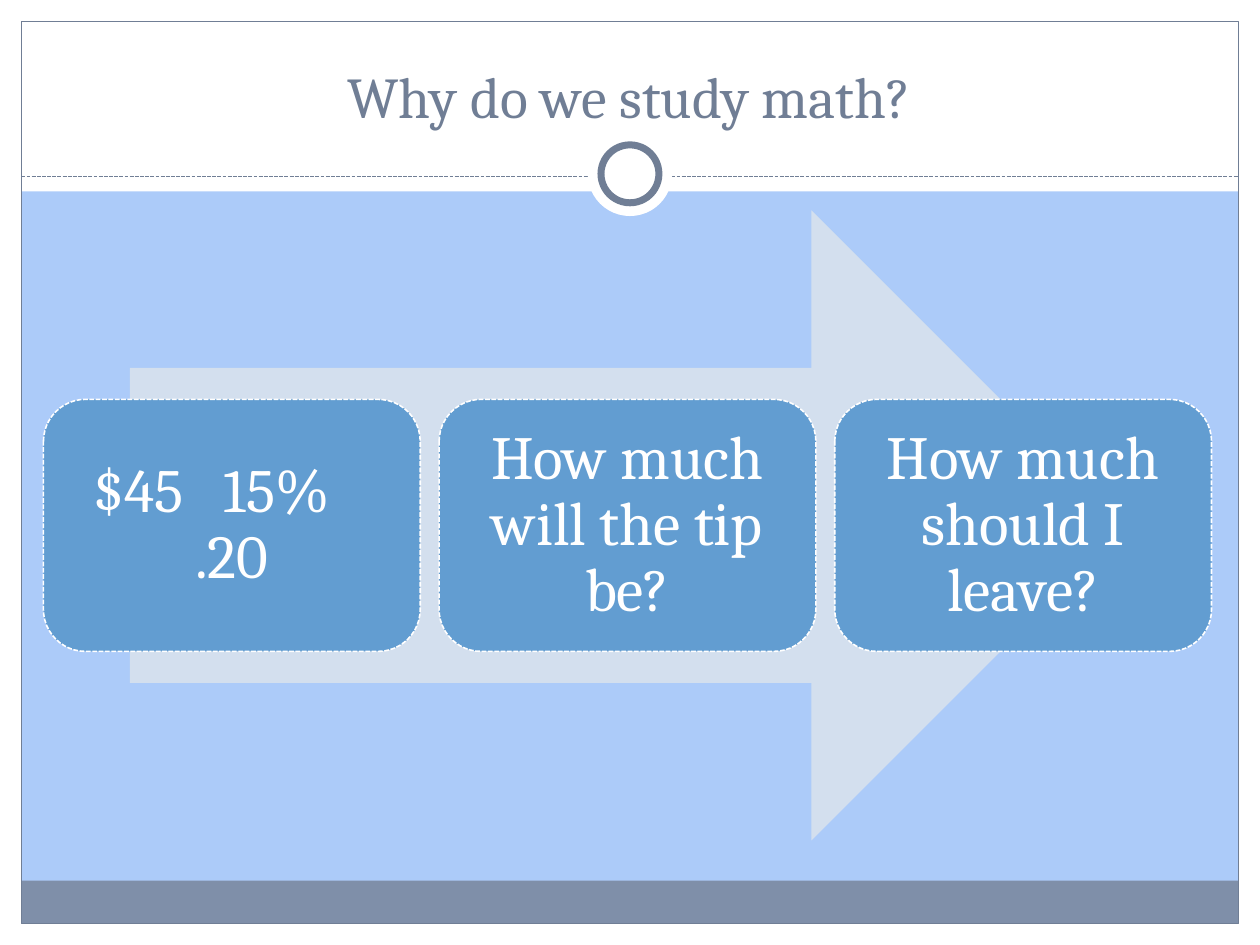
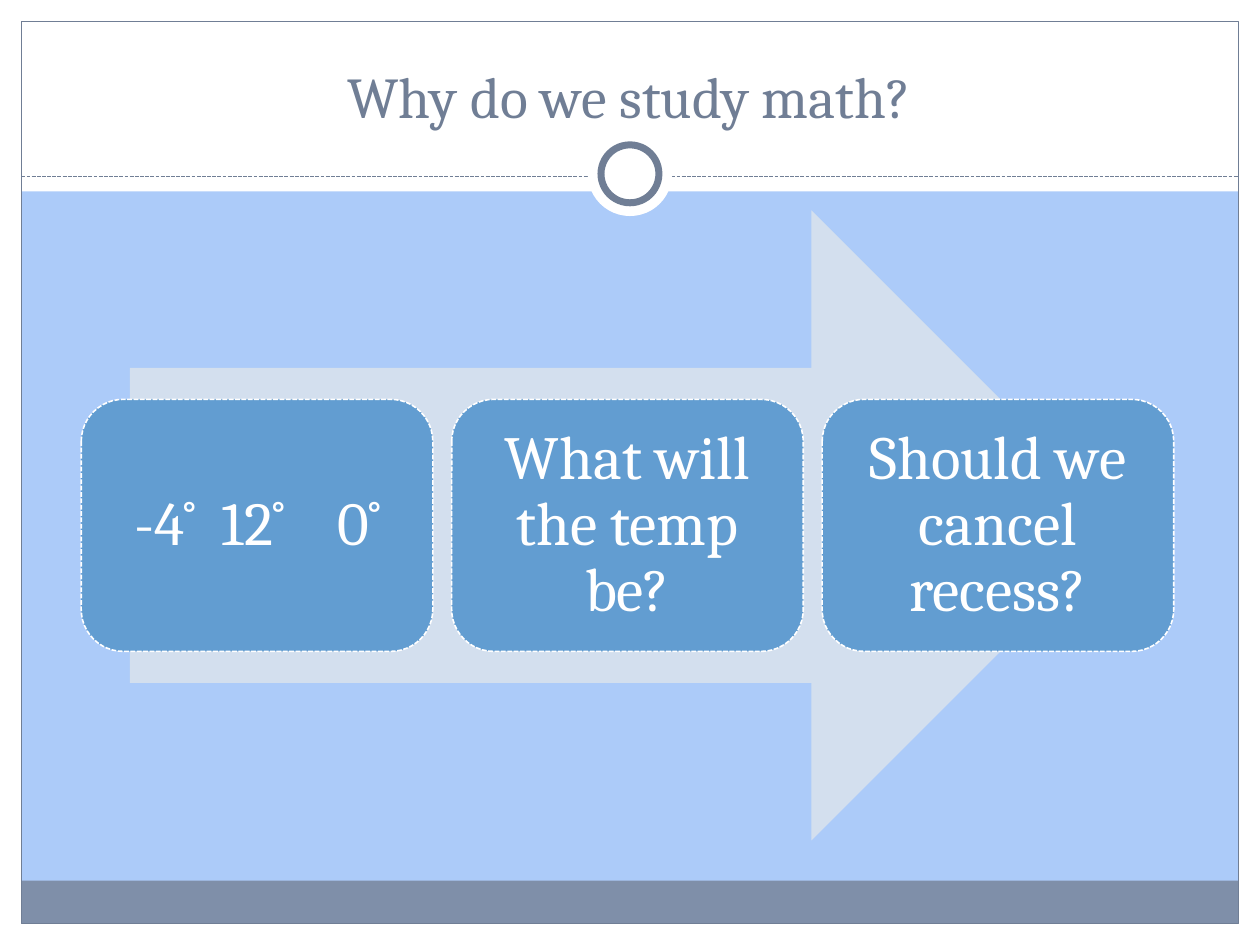
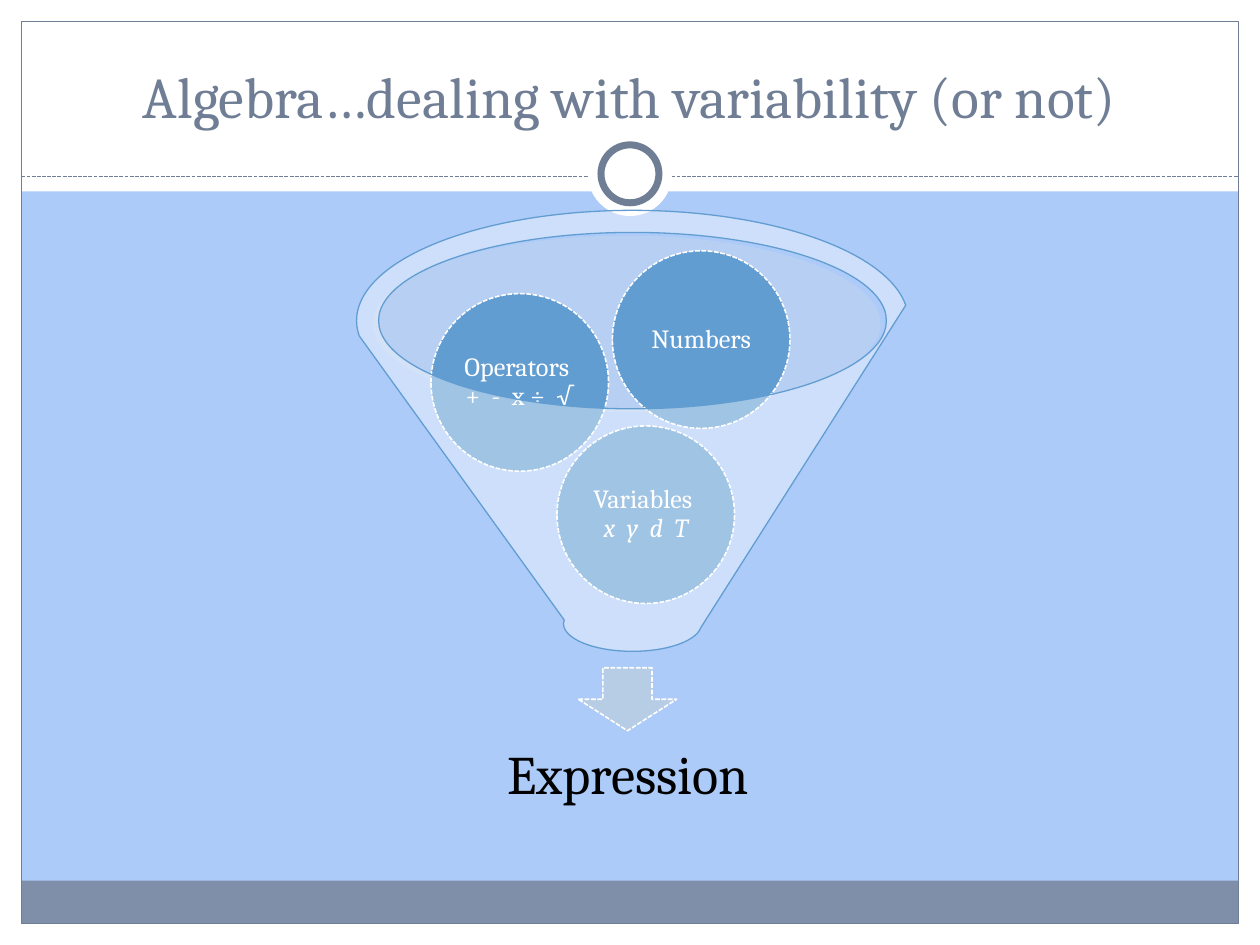
from pptx import Presentation
from pptx.dml.color import RGBColor
from pptx.enum.dml import MSO_LINE_DASH_STYLE as Dash
from pptx.enum.shapes import MSO_CONNECTOR as Link, MSO_SHAPE as Kind
from pptx.enum.text import MSO_ANCHOR as Anchor, PP_ALIGN as Align
from pptx.oxml.ns import qn
from pptx.util import Inches, Pt
from lxml.etree import SubElement

FONT = "Cambria"
WHITE, SLATE, BLUE, SKY = "FFFFFF", "707E95", "629DD1", "ACCBF9"
WIDE, HIGH, EDGE = 10, 7.5, 0.17
RULE = 1.4
MID, GAP = 4.98, 0.15

FLOWS = [
    ("Why do we study math?", 2.99,
     ["$45   15%    .20", "How much will the tip be?", "How much should I leave?"]),
    ("Why do we study math?", 2.79,
     ["-4˚  12˚    0˚", "What will the temp be?", "Should we cancel recess?"]),
]
TOPIC = "Algebra…dealing with variability (or not)"
BALLS = [
    (4.42, 3.38, "Variables  ", "x  y  d  T"),
    (3.42, 2.33, "Operators  +  -  x ÷  √", ""),
    (4.86, 1.99, "Numbers", ""),
]
BALL = 1.41
RESULT = "Expression"


def color(code):
    return RGBColor.from_string(code)


def draw(slide, kind, box, fill=None, line=None, width=0.9, dash=False, alpha=None):
    shape = slide.shapes.add_shape(kind, *map(Inches, box))
    shape.shadow.inherit = False
    if fill:
        shape.fill.solid()
        shape.fill.fore_color.rgb = color(fill)
        if alpha:
            tone = shape.fill._xPr.find(qn("a:solidFill"))[0]
            SubElement(tone, qn("a:alpha"), val=str(alpha * 1000))
    else:
        shape.fill.background()
    if line:
        shape.line.color.rgb = color(line)
        shape.line.width = Pt(width)
        if dash:
            shape.line.dash_style = Dash.SQUARE_DOT
    else:
        shape.line.fill.background()
    return shape


def write(shape, text, size, tint, inset=None, anchor=Anchor.MIDDLE, lead=0.9, slant=""):
    frame = shape.text_frame
    frame.word_wrap = True
    frame.vertical_anchor = anchor
    if inset is not None:
        frame.margin_left = frame.margin_right = Inches(inset)
        frame.margin_top = frame.margin_bottom = Inches(inset)
    frame.text = text
    para = frame.paragraphs[0]
    para.alignment = Align.CENTER
    para.line_spacing = lead
    if slant:
        run = para.add_run()
        run.text = slant
        run.font.italic = True
    for run in para.runs:
        run.font.name = FONT
        run.font.size = Pt(size)
        run.font.color.rgb = color(tint)


def label(slide, box, *args, **style):
    write(slide.shapes.add_textbox(*map(Inches, box)), *args, **style)


def start(deck, title):
    slide = deck.slides.add_slide(deck.slide_layouts[6])
    back = slide.background.fill
    back.solid()
    back.fore_color.rgb = color(SKY)
    for box in [(0, HIGH - EDGE, WIDE, EDGE), (0, 0, WIDE, 1.52),
                (0, 0, EDGE, HIGH), (WIDE - EDGE, 0, EDGE, HIGH)]:
        draw(slide, Kind.RECTANGLE, box, WHITE)
    inner = WIDE - 2 * EDGE
    draw(slide, Kind.RECTANGLE, (EDGE, 6.99, inner, 0.34), "7F8FA9")
    draw(slide, Kind.RECTANGLE, (EDGE, EDGE, inner, HIGH - 2 * EDGE), line=SLATE, width=0.75)
    rule = slide.shapes.add_connector(
        Link.STRAIGHT, *map(Inches, (EDGE, RULE, WIDE - EDGE, RULE)))
    rule.line.color.rgb = color(SLATE)
    rule.line.width = Pt(0.75)
    rule.line.dash_style = Dash.SQUARE_DOT
    SubElement(rule._element.spPr, qn("a:effectLst"))
    for size, line in [(0.67, None), (0.46, SLATE)]:
        box = ((WIDE - size) / 2, 1.38 - size / 2, size, size)
        draw(slide, Kind.OVAL, box, WHITE, line, 4)
    label(slide, (0.33, 0.25, 9.33, 0.83), title, 33, SLATE, anchor=Anchor.BOTTOM, lead=1)
    return slide


def flow(deck, title, width, steps):
    slide = start(deck, title)
    draw(slide, Kind.RIGHT_ARROW, (1.03, 1.67, 7.91, 5), "D3DFEE")
    pitch = width + GAP
    left = MID - (len(steps) * pitch - GAP) / 2
    for i, step in enumerate(steps):
        box = (left + i * pitch, 3.17, width, 2)
        card = draw(slide, Kind.ROUNDED_RECTANGLE, box, BLUE, WHITE, dash=True)
        write(card, step, 35, WHITE, 0.15)


def funnel(deck):
    slide = start(deck, TOPIC)
    draw(slide, Kind.OVAL, (2.96, 1.87, 4.03, 1.4), "C5D5E9", alpha=40)
    draw(slide, Kind.DOWN_ARROW, (4.59, 5.3, 0.78, 0.5), "B7CCE5", WHITE, dash=True)
    label(slide, (3.11, 5.7, 3.75, 0.94), RESULT, 31, "000000", 0.24)
    for left, top, text, slant in BALLS:
        ball = draw(slide, Kind.OVAL, (left, top, BALL, BALL), BLUE, WHITE, dash=True)
        write(ball, text, 15, WHITE, 0.02, slant=slant)
    draw(slide, Kind.FUNNEL, (2.83, 1.67, 4.38, 3.5), WHITE, BLUE, 0.75, alpha=40)


def main():
    deck = Presentation()
    deck.slide_width, deck.slide_height = Inches(WIDE), Inches(HIGH)
    for item in FLOWS:
        flow(deck, *item)
    funnel(deck)
    deck.save("out.pptx")


if __name__ == "__main__":
    main()
